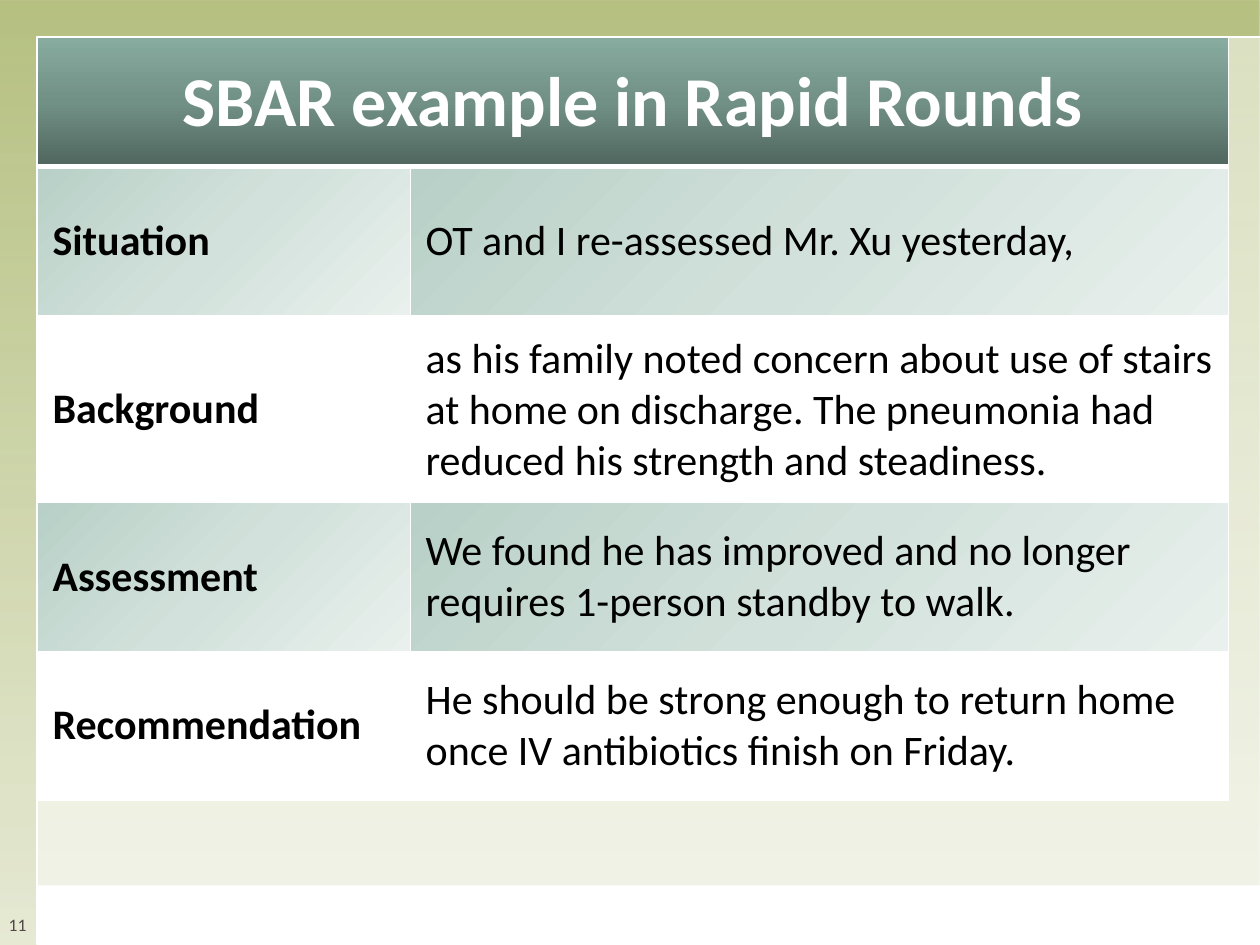
from lxml.etree import SubElement
from pptx import Presentation
from pptx.dml.color import RGBColor
from pptx.enum.shapes import MSO_SHAPE
from pptx.enum.text import MSO_ANCHOR, PP_ALIGN
from pptx.oxml.ns import qn
from pptx.util import Cm, Pt

COLORS = {"olive": "9EAC58", "white": "FFFFFF", "black": "000000", "number": "514746",
          "head_dark": "50665E", "head_mid": "719086", "head_light": "87AB9F",
          "band_dark": "B8D0C7", "band_mid": "D2E1DB", "band_light": "E9F0ED"}
BACKDROP = [("olive", 75), ("olive", 50), ("olive", 25)]
HEAD = [("head_dark", 100), ("head_mid", 100), ("head_light", 100)]
BAND = [("band_dark", 100), ("band_mid", 100), ("band_light", 100)]
WHITE = [("white", 100)]
ROWS = [
    ("Situation", "OT and I re-assessed Mr. Xu yesterday,"),
    ("Background", "as his family noted concern about use of stairs at home on discharge. "
                   "The pneumonia had reduced his strength and steadiness."),
    ("Assessment", "We found he has improved and no longer requires 1-person standby to walk."),
    ("Recommendation", "He should be strong enough to return home once IV antibiotics finish on Friday."),
]


class Deck:
    """Holds the slide style and the slide being built."""

    def __init__(self, width, height, font="Calibri"):
        self.prs = Presentation()
        self.prs.slide_width, self.prs.slide_height = Cm(width), Cm(height)
        self.s = self.prs.slides.add_slide(self.prs.slide_layouts[6])
        self.font = font

    def color(self, parent, name, alpha=100):
        clr = SubElement(parent, qn("a:srgbClr"), val=COLORS[name])
        if alpha < 100:
            SubElement(clr, qn("a:alpha"), val=str(alpha * 1000))

    def fill(self, parent, stops, angle=0):
        if len(stops) == 1:
            self.color(SubElement(parent, qn("a:solidFill")), *stops[0])
            return
        grad = SubElement(parent, qn("a:gradFill"), rotWithShape="1")
        gs_list = SubElement(grad, qn("a:gsLst"))
        for i, stop in enumerate(stops):
            pos = 100000 * i // (len(stops) - 1)
            self.color(SubElement(gs_list, qn("a:gs"), pos=str(pos)), *stop)
        SubElement(grad, qn("a:lin"), ang=str(angle * 60000), scaled="0")

    def text(self, tf, text, size, color, bold=False, align=PP_ALIGN.LEFT):
        p = tf.paragraphs[0]
        p.alignment = align
        r = p.add_run()
        r.text = text
        r.font.name, r.font.size, r.font.bold = self.font, Pt(size), bold
        r.font.color.rgb = RGBColor.from_string(COLORS[color])

    def rect(self, box, stops, angle=0, line=None):
        sp = self.s.shapes.add_shape(MSO_SHAPE.RECTANGLE, *map(Cm, box))
        self.fill(sp._element.spPr, stops, angle)
        if line:
            sp.line.color.rgb = RGBColor.from_string(COLORS[line])
            sp.line.width = Pt(1)
        else:
            sp.line.fill.background()
        sp.shadow.inherit = False

    def label(self, box, text, size, color):
        tf = self.s.shapes.add_textbox(*map(Cm, box)).text_frame
        tf.word_wrap = True
        tf.vertical_anchor = MSO_ANCHOR.BOTTOM
        tf.margin_left = tf.margin_right = 0
        tf.margin_top, tf.margin_bottom = Cm(0.1), Cm(0.2)
        self.text(tf, text, size, color, align=PP_ALIGN.CENTER)

    def cell(self, cell, stops, angle, bottom=1):
        cell.vertical_anchor = MSO_ANCHOR.MIDDLE
        cell.margin_left = cell.margin_right = Cm(0.3)
        cell.margin_top = cell.margin_bottom = Cm(0.36)
        tc_pr = cell._tc.get_or_add_tcPr()
        for side, width in zip("LRTB", (1, 1, 1, bottom)):
            ln = SubElement(tc_pr, qn(f"a:ln{side}"), w=str(Pt(width)))
            self.fill(ln, WHITE)
        self.fill(tc_pr, stops, angle)

    def table(self, left, top, widths, heights, title, rows):
        frame = self.s.shapes.add_table(len(heights), len(widths), Cm(left), Cm(top),
                                        Cm(sum(widths)), Cm(sum(heights)))
        tbl = frame.table
        tbl.first_row = tbl.horz_banding = False
        for col, width in zip(tbl.columns, widths):
            col.width = Cm(width)
        for row, height in zip(tbl.rows, heights):
            row.height = Cm(height)
        tbl.cell(0, 0).merge(tbl.cell(0, len(widths) - 1))
        for cell in tbl.rows[0].cells:
            self.cell(cell, HEAD, 270, bottom=3)
        self.text(tbl.cell(0, 0).text_frame, title, 40, "white", True, PP_ALIGN.CENTER)
        for i, row in enumerate(rows, 1):
            for j, text in enumerate(row):
                self.cell(tbl.cell(i, j), BAND if i % 2 else WHITE, 45)
                self.text(tbl.cell(i, j).text_frame, text, 24, "black", bold=j == 0)


def main():
    deck = Deck(25.4, 19.05)
    deck.rect((-0.02, 0, 25.42, 19.05), BACKDROP, 90)
    deck.rect((0.74, 0.74, 24.68, 18.29), [("white", 50)], line="white")
    deck.rect((0.74, 17.85, 24.68, 1.2), WHITE)
    deck.label((0, 17.85, 0.71, 1.2), "11", 10, "number")
    deck.table(0.76, 0.76, (7.52, 16.48), (2.6,) + (3,) * len(ROWS),
               "SBAR example in Rapid Rounds", ROWS)
    deck.prs.save("out.pptx")


if __name__ == "__main__":
    main()
